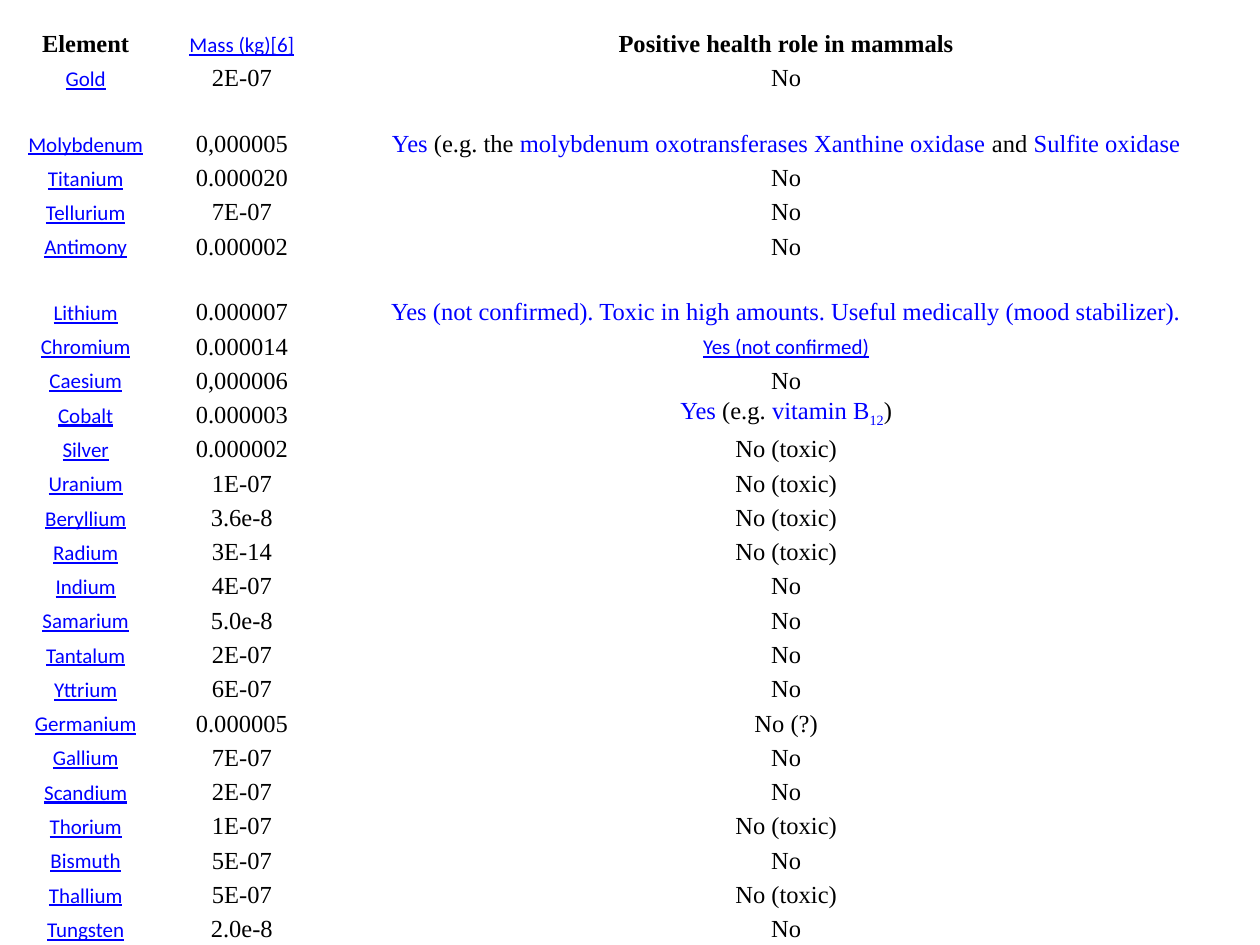
import pptx
import pptx.dml.color
import pptx.enum.text
import pptx.util

SLIDE_WIDTH, SLIDE_HEIGHT = 10, 7.5
BLACK, BLUE = "000000", "0000FF"
COLUMN_SHARES = (0.136, 0.112, 0.752)
HEADER_HEIGHT, TALL_HEIGHT = 0.47, 0.52
TALL_ELEMENTS = ("Molybdenum", "Lithium")
CELL_INSET = 0.01

# A run is its text followed by the name of its style.
# Style: font, size, colour, bold, underline, baseline in percent
STYLES = {
    "heading": ("Times New Roman", 14, BLACK, True, False, 0),
    "plain": ("Times New Roman", 14, BLACK, False, False, 0),
    "blue": ("Times New Roman", 14, BLUE, False, False, 0),
    "subscript": ("Times New Roman", 14, BLUE, False, False, -25),
    "link": ("Calibri", 12, BLUE, False, True, 0),
}

HEADER = (
    [("Element", "heading")],
    [("Mass (kg)[6]", "link")],
    [("Positive health role in mammals", "heading")],
)

MOLYBDENUM_ROLE = [
    ("Yes", "blue"),
    (" (e.g. the ", "plain"),
    ("molybdenum oxotransferases Xanthine oxidase", "blue"),
    (" and ", "plain"),
    ("Sulfite oxidase", "blue"),
]
LITHIUM_ROLE = [
    ("Yes (not confirmed). Toxic in high amounts. "
     "Useful medically (mood stabilizer).", "blue"),
]
CHROMIUM_ROLE = [("Yes (not confirmed)", "link")]
COBALT_ROLE = [
    ("Yes", "blue"),
    (" (e.g. ", "plain"),
    ("vitamin B", "blue"),
    ("12", "subscript"),
    (")", "plain"),
]
NO = [("No", "plain")]
TOXIC = [("No (toxic)", "plain")]
UNCERTAIN = [("No (?)", "plain")]

ELEMENTS = (
    ("Gold", "2E-07", NO),
    ("Molybdenum", "0,000005", MOLYBDENUM_ROLE),
    ("Titanium", "0.000020", NO),
    ("Tellurium", "7E-07", NO),
    ("Antimony", "0.000002", NO),
    ("Lithium", "0.000007", LITHIUM_ROLE),
    ("Chromium", "0.000014", CHROMIUM_ROLE),
    ("Caesium", "0,000006", NO),
    ("Cobalt", "0.000003", COBALT_ROLE),
    ("Silver", "0.000002", TOXIC),
    ("Uranium", "1E-07", TOXIC),
    ("Beryllium", "3.6e-8", TOXIC),
    ("Radium", "3E-14", TOXIC),
    ("Indium", "4E-07", NO),
    ("Samarium", "5.0e-8", NO),
    ("Tantalum", "2E-07", NO),
    ("Yttrium", "6E-07", NO),
    ("Germanium", "0.000005", UNCERTAIN),
    ("Gallium", "7E-07", NO),
    ("Scandium", "2E-07", NO),
    ("Thorium", "1E-07", TOXIC),
    ("Bismuth", "5E-07", NO),
    ("Thallium", "5E-07", TOXIC),
    ("Tungsten", "2.0e-8", NO),
)


def rgb(hex_string):
    return pptx.dml.color.RGBColor.from_string(hex_string)


def add_run(paragraph, text, style):
    name, size, colour, bold, underline, baseline = STYLES[style]
    run = paragraph.add_run()
    run.text = text
    run.font.name = name
    run.font.size = pptx.util.Pt(size)
    run.font.color.rgb = rgb(colour)
    run.font.bold = bold
    run.font.underline = underline
    if baseline:
        run._r.get_or_add_rPr().set("baseline", str(baseline * 1000))


def fill_cell(cell, runs):
    cell.fill.background()
    cell.vertical_anchor = pptx.enum.text.MSO_ANCHOR.BOTTOM
    inset = pptx.util.Inches(CELL_INSET)
    cell.margin_left = cell.margin_right = inset
    cell.margin_top = cell.margin_bottom = inset
    paragraph = cell.text_frame.paragraphs[0]
    paragraph.alignment = pptx.enum.text.PP_ALIGN.CENTER
    for text, style in runs:
        add_run(paragraph, text, style)


def row_heights(total):
    """Share what the header and the tall rows leave among the other rows."""
    tall = len(TALL_ELEMENTS)
    regular = (total - HEADER_HEIGHT - tall * TALL_HEIGHT) / (len(ELEMENTS) - tall)
    return [HEADER_HEIGHT] + [
        TALL_HEIGHT if element in TALL_ELEMENTS else regular
        for element, mass, role in ELEMENTS
    ]


def add_element_table(slide, left, top, width, height):
    body = [
        ([(element, "link")], [(mass, "plain")], role)
        for element, mass, role in ELEMENTS
    ]
    rows = [HEADER] + body
    box = [pptx.util.Inches(length) for length in (left, top, width, height)]
    table = slide.shapes.add_table(len(rows), len(COLUMN_SHARES), *box).table
    table.first_row = False
    table.horz_banding = False
    for column, share in zip(table.columns, COLUMN_SHARES):
        column.width = pptx.util.Inches(width * share)
    for row, row_height, contents in zip(table.rows, row_heights(height), rows):
        row.height = pptx.util.Inches(row_height)
        for cell, runs in zip(row.cells, contents):
            fill_cell(cell, runs)


def main():
    presentation = pptx.Presentation()
    presentation.slide_width = pptx.util.Inches(SLIDE_WIDTH)
    presentation.slide_height = pptx.util.Inches(SLIDE_HEIGHT)
    blank_layout = presentation.slide_layouts[6]
    slide = presentation.slides.add_slide(blank_layout)
    add_element_table(slide, 0, 0, SLIDE_WIDTH, SLIDE_HEIGHT)
    presentation.save("out.pptx")


if __name__ == "__main__":
    main()
